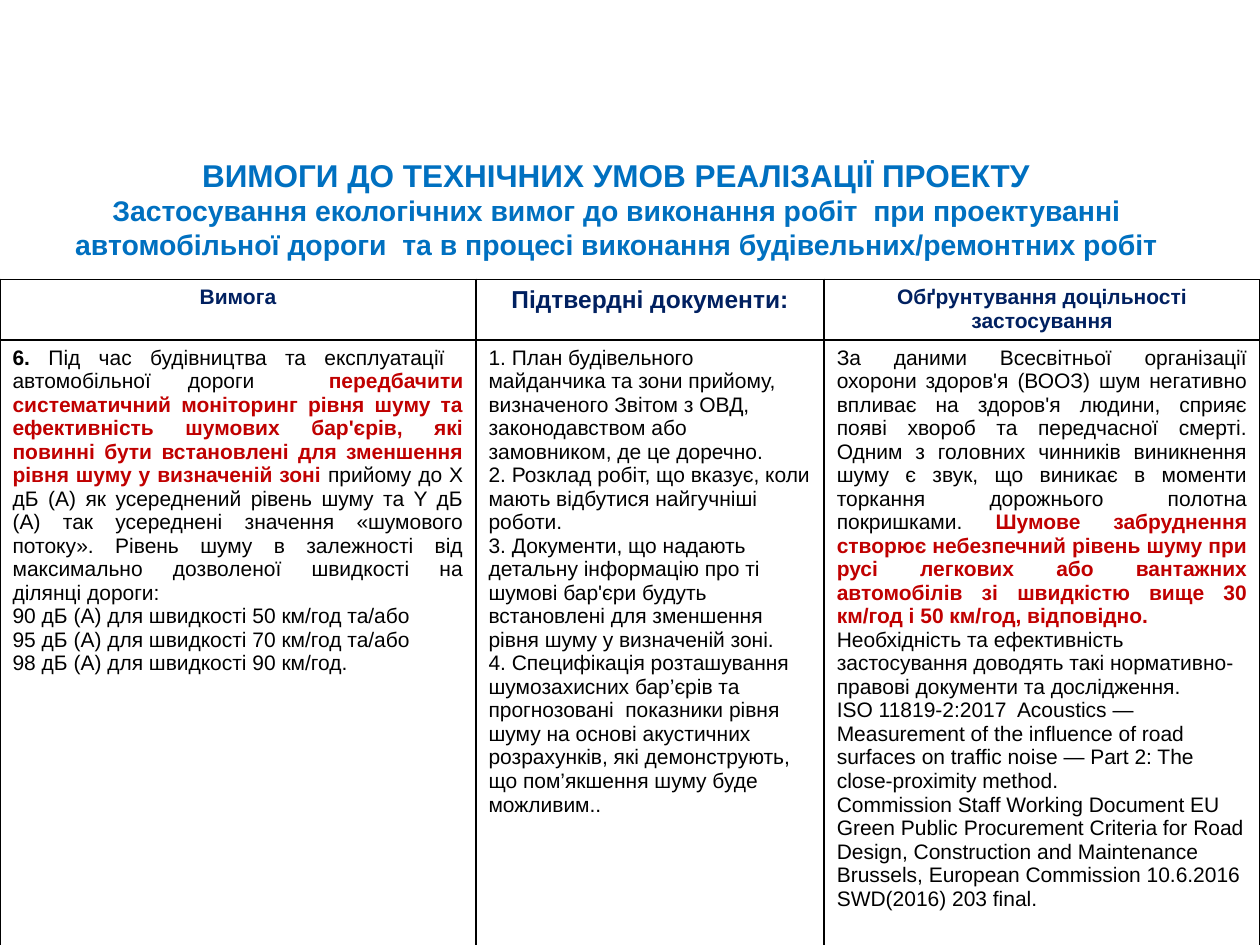
import pptx
import pptx.util
import pptx.dml.color
import pptx.enum.text
import pptx.oxml
import pptx.oxml.ns

Pt = pptx.util.Pt
ALIGN = pptx.enum.text.PP_ALIGN
ANCHOR = pptx.enum.text.MSO_ANCHOR
FONT = "Arial"
COLORS = {
    "title": "0070C0",
    "header": "002060",
    "body": "000000",
    "accent": "C00000",
    "fill": "FFFFFF",
    "border": "000000",
}

TITLE = [
    ("ВИМОГИ ДО ТЕХНІЧНИХ УМОВ РЕАЛІЗАЦІЇ ПРОЕКТУ", 18),
    ("Застосування екологічних вимог до виконання робіт  при проектуванні "
     "автомобільної дороги  та в процесі виконання будівельних/ремонтних робіт", 16.2),
]
HEADERS = [
    ("Вимога", 12),
    ("Підтвердні документи:", 14),
    ("Обґрунтування доцільності застосування", 12),
]
REQUIREMENT = [
    [
        ("6. ", "body", True),
        ("Під час будівництва та експлуатації  автомобільної дороги  ", "body", False),
        ("передбачити систематичний моніторинг рівня шуму та ефективність шумових "
         "бар'єрів, які повинні бути встановлені для зменшення рівня шуму у "
         "визначеній зоні", "accent", True),
        (" прийому до X дБ (A) як усереднений рівень шуму та Y дБ (A) так усереднені "
         "значення «шумового потоку». Рівень шуму в залежності від максимально "
         "дозволеної швидкості на ділянці дороги:", "body", False),
    ],
    "90 дБ (А) для швидкості 50 км/год та/або",
    "95 дБ (А) для швидкості 70 км/год та/або",
    "98 дБ (А) для швидкості 90 км/год.",
]
DOCUMENTS = [
    "1. План будівельного майданчика та зони прийому, визначеного Звітом з ОВД, "
    "законодавством або замовником, де це доречно.",
    "2. Розклад робіт, що вказує, коли мають відбутися найгучніші роботи.",
    "3. Документи, що надають детальну інформацію про ті шумові бар'єри будуть "
    "встановлені для зменшення рівня шуму у визначеній зоні.",
    "4. Специфікація розташування шумозахисних бар’єрів та прогнозовані  показники "
    "рівня шуму на основі акустичних розрахунків, які демонструють, що пом’якшення "
    "шуму буде можливим..",
]
RATIONALE = [
    [
        ("За даними Всесвітньої організації охорони здоров'я (ВООЗ) шум негативно "
         "впливає на здоров'я людини, сприяє появі хвороб та передчасної смерті. "
         "Одним з головних чинників виникнення шуму є звук, що виникає в моменти "
         "торкання дорожнього полотна покришками. ", "body", False),
        ("Шумове забруднення створює небезпечний рівень шуму при русі легкових або "
         "вантажних автомобілів зі швидкістю вище 30 км/год і 50 км/год, "
         "відповідно. ", "accent", True),
    ],
    "Необхідність та ефективність застосування доводять такі нормативно-правові "
    "документи та дослідження.",
    "ISO 11819-2:2017  Acoustics — Measurement of the influence of road surfaces on "
    "traffic noise — Part 2: The close-proximity method.",
    "Commission Staff Working Document EU Green Public Procurement Criteria for Road "
    "Design, Construction and Maintenance Brussels, European Commission 10.6.2016 "
    "SWD(2016) 203 final.",
]


def rgb(name):
    return pptx.dml.color.RGBColor.from_string(COLORS[name])


def set_font(font, size, color, bold):
    font.name = FONT
    font.size = Pt(size)
    font.bold = bold
    font.color.rgb = rgb(color)


def next_paragraph(tf, index):
    return tf.add_paragraph() if index else tf.paragraphs[0]


def add_title(s):
    sp = s.shapes.title
    sp.left, sp.top, sp.width, sp.height = Pt(0), Pt(97.9), Pt(704.2), Pt(61.2)
    tf = sp.text_frame
    tf.auto_size = pptx.enum.text.MSO_AUTO_SIZE.NONE
    tf.word_wrap = True
    tf.vertical_anchor = ANCHOR.MIDDLE
    tf.margin_bottom = Pt(22.2)
    for i, (text, size) in enumerate(TITLE):
        p = next_paragraph(tf, i)
        p.text = text
        p.alignment = ALIGN.CENTER
        set_font(p.font, size, "title", True)


def style_cell(cell):
    cell.fill.solid()
    cell.fill.fore_color.rgb = rgb("fill")
    tcPr = cell._tc.get_or_add_tcPr()
    for i, side in enumerate(("lnL", "lnR", "lnT", "lnB")):
        tcPr.insert(i, pptx.oxml.parse_xml(
            f'<a:{side} {pptx.oxml.ns.nsdecls("a")} w="12700"><a:solidFill>'
            f'<a:srgbClr val="{COLORS["border"]}"/></a:solidFill></a:{side}>'))


def fill_header(cell, text, size):
    p = cell.text_frame.paragraphs[0]
    p.text = text
    p.alignment = ALIGN.CENTER
    set_font(p.font, size, "header", True)


def fill_body(cell, paragraphs):
    for i, content in enumerate(paragraphs):
        p = next_paragraph(cell.text_frame, i)
        if isinstance(content, str):
            p.text = content
            p.alignment = ALIGN.LEFT
            set_font(p.font, 12, "body", False)
            continue
        p.alignment = ALIGN.JUSTIFY
        for text, color, bold in content:
            r = p.add_run()
            r.text = text
            set_font(r.font, 12, color, bold)


def add_requirements_table(s):
    widths, heights = (272, 199, 249), (34.5, 351.5)
    table = s.shapes.add_table(2, 3, Pt(0), Pt(159.7), Pt(sum(widths)), Pt(sum(heights))).table
    table.first_row = False
    table.horz_banding = False
    for column, width in zip(table.columns, widths):
        column.width = Pt(width)
    for row, height in zip(table.rows, heights):
        row.height = Pt(height)
    for cell in table.iter_cells():
        style_cell(cell)
    for i, (header, body) in enumerate(zip(HEADERS, (REQUIREMENT, DOCUMENTS, RATIONALE))):
        fill_header(table.cell(0, i), *header)
        fill_body(table.cell(1, i), body)


def main():
    prs = pptx.Presentation()
    prs.slide_width, prs.slide_height = Pt(720), Pt(540)
    s = prs.slides.add_slide(prs.slide_layouts[5])
    add_title(s)
    add_requirements_table(s)
    prs.save("out.pptx")


if __name__ == "__main__":
    main()
